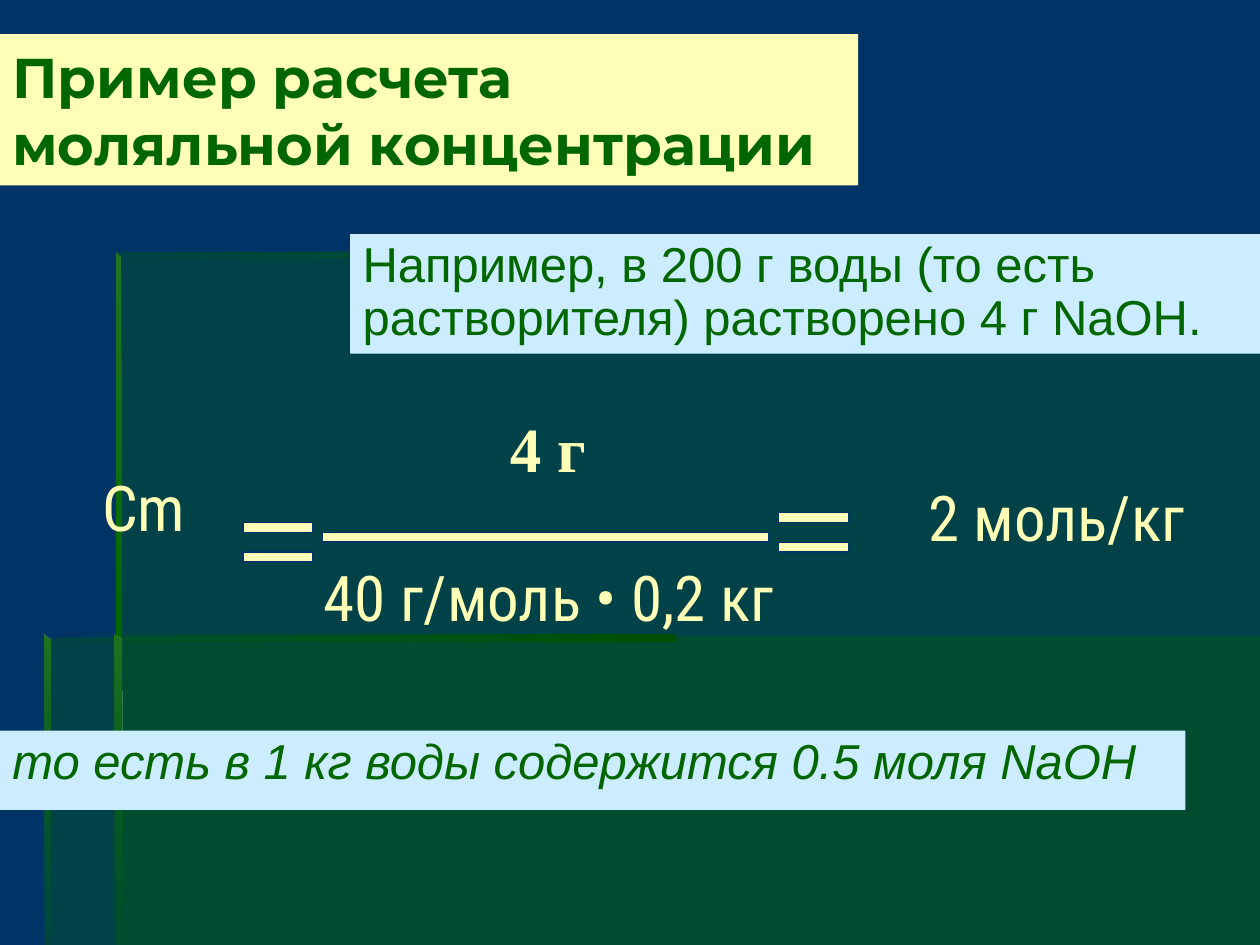
from typing import NamedTuple

import pptx
import pptx.dml.color
import pptx.enum.dml
import pptx.enum.shapes
import pptx.enum.text
import pptx.oxml
import pptx.oxml.ns
import pptx.util
from pptx.util import Cm

RGBColor = pptx.dml.color.RGBColor
NAVY = RGBColor(0x00, 0x33, 0x66)
GREEN = RGBColor(0x00, 0x66, 0x00)
DEEP_GREEN = RGBColor(0x00, 0x50, 0x00)
LIGHT_GREEN = RGBColor(0x20, 0x74, 0x20)
CREAM = RGBColor(0xFF, 0xFF, 0xB7)
PALE_BLUE = RGBColor(0xCC, 0xEC, 0xFF)

WIDTH, HEIGHT = 25.4, 19.05
BAR_HEIGHT = 0.2


class Tint(NamedTuple):
    color: RGBColor
    opacity: int = 100


class Backdrop(NamedTuple):
    points: list[tuple[float, float]]
    tints: list[Tint]
    angle: int = 0


class Label(NamedTuple):
    left: float
    top: float
    width: float
    height: float
    text: str
    size: int
    font: str
    color: RGBColor
    background: RGBColor | None = None
    bold: bool = False
    italic: bool = False
    middle: bool = False
    spacing: float | None = None


class Bar(NamedTuple):
    left: float
    top: float
    width: float


VEIL = [Tint(GREEN, 30)]
FADE_IN = [Tint(GREEN, 0), Tint(DEEP_GREEN)]
DOWNWARD = 270

BACKDROPS = [
    Backdrop([(2.34, 12.83), (2.34, HEIGHT), (WIDTH, HEIGHT), (WIDTH, 12.83)], VEIL),
    Backdrop([(2.39, 12.85), (0.91, 12.85), (0.91, HEIGHT), (WIDTH, HEIGHT),
              (WIDTH, 5.08), (2.39, 5.08)], VEIL),
    Backdrop([(2.34, 5.08), (2.34, 5.21), (22.63, 5.21), (22.63, 5.08)], FADE_IN),
    Backdrop([(2.34, 5.08), (2.34, 12.95), (2.46, 12.95), (2.44, 5.18)],
             [Tint(LIGHT_GREEN), Tint(GREEN)], DOWNWARD),
    Backdrop([(2.31, HEIGHT), (2.46, HEIGHT), (2.44, 12.9), (2.31, 12.8)],
             [Tint(LIGHT_GREEN), Tint(GREEN, 0)], DOWNWARD),
    Backdrop([(0.89, 12.8), (0.89, 12.93), (13.59, 12.93), (13.59, 12.8)], FADE_IN),
    Backdrop([(0.89, 12.8), (0.89, HEIGHT), (1.02, HEIGHT), (1.02, 12.93)],
             [Tint(LIGHT_GREEN), Tint(GREEN, 10)], DOWNWARD),
]

PANELS = [
    Label(7.06, 4.72, 18.34, 2.41,
          "Например, в 200 г воды (то есть растворителя) растворено 4 г NaOH.",
          28, "Arial", GREEN, PALE_BLUE, spacing=0.9),
    Label(0, 0.69, 17.3, 3.05, "Пример расчета моляльной концентрации",
          32, "Montserrat", GREEN, CREAM, bold=True, middle=True),
    Label(0, 14.73, 23.9, 1.6, "то есть в 1 кг воды содержится 0.5 моля NaOH",
          28, "Arial", GREEN, PALE_BLUE, italic=True, spacing=0.9),
]

FORMULA_TERMS = [
    Label(1.3, 9.32, 3.2, 2.59, "Cm", 36, "Roboto Condensed", CREAM),
    Label(9.7, 8.13, 3, 2.21, "4 г ", 36, "Times New Roman", CREAM, bold=True),
    Label(5.97, 11.13, 10.2, 2.18, "40 г/моль • 0,2 кг", 36, "Roboto Condensed", CREAM),
    Label(17.7, 9.53, 7.21, 2.21, "2 моль/кг", 36, "Roboto Condensed", CREAM),
]

FRACTION_BAR = Bar(6.5, 10.73, 9)
EQUALS_BARS = [
    Bar(left, top + row * 0.6, 1.4)
    for left, top in [(4.9, 10.53), (15.7, 10.33)]
    for row in range(2)
]


def draw_backdrop(shapes, backdrop: Backdrop) -> None:
    start, *rest = [(Cm(x), Cm(y)) for x, y in backdrop.points]
    builder = shapes.build_freeform(*start)
    builder.add_line_segments(rest, close=True)
    region = builder.convert_to_shape()
    region.shadow.inherit = False
    region.line.fill.background()
    if len(backdrop.tints) == 1:
        region.fill.solid()
        region.fill.fore_color.rgb = backdrop.tints[0].color
    else:
        region.fill.gradient()
        region.fill.gradient_angle = backdrop.angle
        for stop, tint in zip(region.fill.gradient_stops, backdrop.tints):
            stop.color.rgb = tint.color
    colors = region._element.spPr.iter(pptx.oxml.ns.qn("a:srgbClr"))
    for color, tint in zip(list(colors), backdrop.tints):
        if tint.opacity < 100:
            color.append(pptx.oxml.parse_xml(
                f'<a:alpha {pptx.oxml.ns.nsdecls("a")} val="{tint.opacity * 1000}"/>'))


def draw_label(shapes, label: Label) -> None:
    box = shapes.add_textbox(Cm(label.left), Cm(label.top),
                             Cm(label.width), Cm(label.height))
    frame = box.text_frame
    frame.word_wrap = label.background is not None
    paragraph = frame.paragraphs[0]
    if label.background is None:
        paragraph.alignment = pptx.enum.text.PP_ALIGN.CENTER
    else:
        box.fill.solid()
        box.fill.fore_color.rgb = label.background
    if label.middle:
        frame.vertical_anchor = pptx.enum.text.MSO_ANCHOR.MIDDLE
    if label.spacing:
        paragraph.line_spacing = label.spacing
        paragraph.space_before = pptx.util.Pt(3)
    run = paragraph.add_run()
    run.text = label.text
    run.font.name = label.font
    run.font.size = pptx.util.Pt(label.size)
    run.font.color.rgb = label.color
    run.font.bold = label.bold
    run.font.italic = label.italic


def draw_bar(shapes, bar: Bar) -> None:
    stroke = shapes.add_shape(pptx.enum.shapes.MSO_SHAPE.RECTANGLE, Cm(bar.left),
                              Cm(bar.top), Cm(bar.width), Cm(BAR_HEIGHT))
    stroke.shadow.inherit = False
    stroke.fill.solid()
    stroke.fill.fore_color.rgb = CREAM
    stroke.line.color.rgb = NAVY
    stroke.line.width = pptx.util.Pt(0.75)


def main() -> None:
    presentation = pptx.Presentation()
    presentation.slide_width = Cm(WIDTH)
    presentation.slide_height = Cm(HEIGHT)
    slide = presentation.slides.add_slide(presentation.slide_layouts[6])
    slide.background.fill.solid()
    slide.background.fill.fore_color.rgb = NAVY
    for backdrop in BACKDROPS:
        draw_backdrop(slide.shapes, backdrop)
    for label in PANELS + FORMULA_TERMS:
        draw_label(slide.shapes, label)
    for bar in [FRACTION_BAR, *EQUALS_BARS]:
        draw_bar(slide.shapes, bar)
    presentation.save("out.pptx")


if __name__ == "__main__":
    main()
